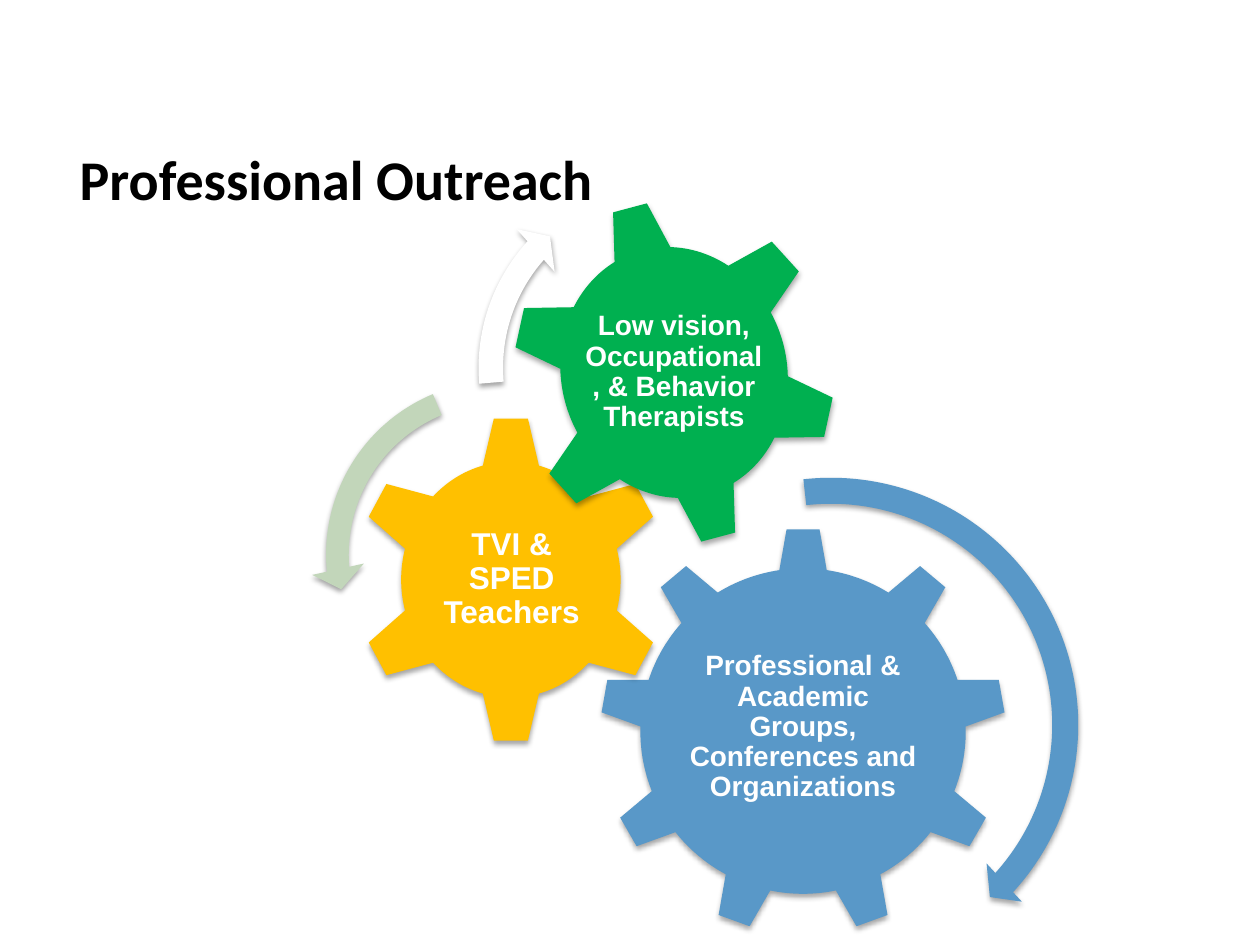
from lxml import etree
from pptx import Presentation
from pptx.dml.color import RGBColor
from pptx.enum.shapes import MSO_SHAPE
from pptx.enum.text import MSO_ANCHOR, PP_ALIGN
from pptx.oxml.ns import qn
from pptx.util import Cm, Pt

GEAR_6, GEAR_9 = MSO_SHAPE.GEAR_6, MSO_SHAPE.GEAR_9
CLOCKWISE, COUNTER = MSO_SHAPE.CIRCULAR_ARROW, MSO_SHAPE.LEFT_CIRCULAR_ARROW
LEFT, CENTER = PP_ALIGN.LEFT, PP_ALIGN.CENTER
MIDDLE, BOTTOM = MSO_ANCHOR.MIDDLE, MSO_ANCHOR.BOTTOM

COLORS = {
    "black": "000000",
    "white": "FFFFFF",
    "blue": "5998C8",
    "gold": "FFC000",
    "green": "00B050",
    "sage": "C2D6BA",
}

TITLE = "Professional Outreach"
TITLE_AREA = (1.35, 2.82, 23.42, 1.57)

# Areas are left, top, width, height in centimetres.
GEARS = [
    dict(kind=GEAR_9, area=(12.09, 10.64, 8.2, 8.2), turn=0, color="blue",
         label="Professional & Academic Groups, Conferences and Organizations",
         label_area=(13.74, 12.55, 4.9, 4.22), size=16),
    dict(kind=GEAR_6, area=(7.14, 8.36, 6.32, 6.65), turn=0, color="gold",
         label="TVI & SPED Teachers",
         label_area=(8.74, 10.01, 3.15, 3.35), size=18),
    dict(kind=GEAR_6, area=(10.34, 3.99, 6.5, 7.04), turn=345, color="green",
         label="Low vision, Occupational, & Behavior Therapists",
         label_area=(11.73, 5.56, 3.71, 3.89), size=16),
]

# Kind, left, top, diameter, colour, adjustments
ARROWS = [
    (CLOCKWISE, 11.51, 9.37, 10.49, "blue", (0.05, 2.99, 25.39, 158.14, 0.05)),
    (COUNTER, 6.27, 7.37, 7.62, "sage", (0.06, 4.3, 104.89, 148.38, 0.07)),
    (CLOCKWISE, 9.32, 3.3, 8.23, "white", (0.06, 3.94, 133.14, 105.08, 0.07)),
]


def color_of(name):
    return RGBColor.from_string(COLORS[name])


def lengths(area):
    return [Cm(value) for value in area]


def add_soft_shadow(shape):
    shape.shadow.inherit = False
    effects = shape._element.spPr.find(qn("a:effectLst"))
    shadow = etree.SubElement(
        effects, qn("a:outerShdw"), blurRad=str(Pt(3.1)), dist=str(Pt(1.8)),
        dir="5400000", rotWithShape="0")
    tint = etree.SubElement(shadow, qn("a:srgbClr"), val=COLORS["black"])
    etree.SubElement(tint, qn("a:alpha"), val="35000")


def add_part(page, kind, area, color):
    part = page.shapes.add_shape(kind, *lengths(area))
    part.fill.solid()
    part.fill.fore_color.rgb = color_of(color)
    part.line.fill.background()
    add_soft_shadow(part)
    return part


def write(frame, text, font, size, color, align, anchor):
    frame.word_wrap = True
    frame.vertical_anchor = anchor
    para = frame.paragraphs[0]
    para.alignment = align
    para.line_spacing = 0.9 if align == CENTER else 1.0
    span = para.add_run()
    span.text = text
    span.font.name = font
    span.font.size = Pt(size)
    span.font.bold = True
    span.font.color.rgb = color_of(color)


def add_gear(page, gear):
    add_part(page, gear["kind"], gear["area"], gear["color"]).rotation = gear["turn"]
    frame = page.shapes.add_textbox(*lengths(gear["label_area"])).text_frame
    frame.margin_left = frame.margin_right = Cm(0.06)
    frame.margin_top = frame.margin_bottom = Cm(0.06)
    write(frame, gear["label"], "Arial", gear["size"], "white", CENTER, MIDDLE)


def add_arrow(page, kind, left, top, diameter, color, adjustments):
    arrow = add_part(page, kind, (left, top, diameter, diameter), color)
    for index, value in enumerate(adjustments):
        arrow.adjustments[index] = value


def main():
    deck = Presentation()
    deck.slide_width, deck.slide_height = Cm(25.4), Cm(19.05)
    page = deck.slides.add_slide(deck.slide_layouts[5])

    title = page.shapes.title
    title.left, title.top, title.width, title.height = lengths(TITLE_AREA)
    write(title.text_frame, TITLE, "Calibri", 32, "black", LEFT, BOTTOM)

    for gear in GEARS:
        add_gear(page, gear)
    for arrow in ARROWS:
        add_arrow(page, *arrow)

    deck.save("out.pptx")


if __name__ == "__main__":
    main()
